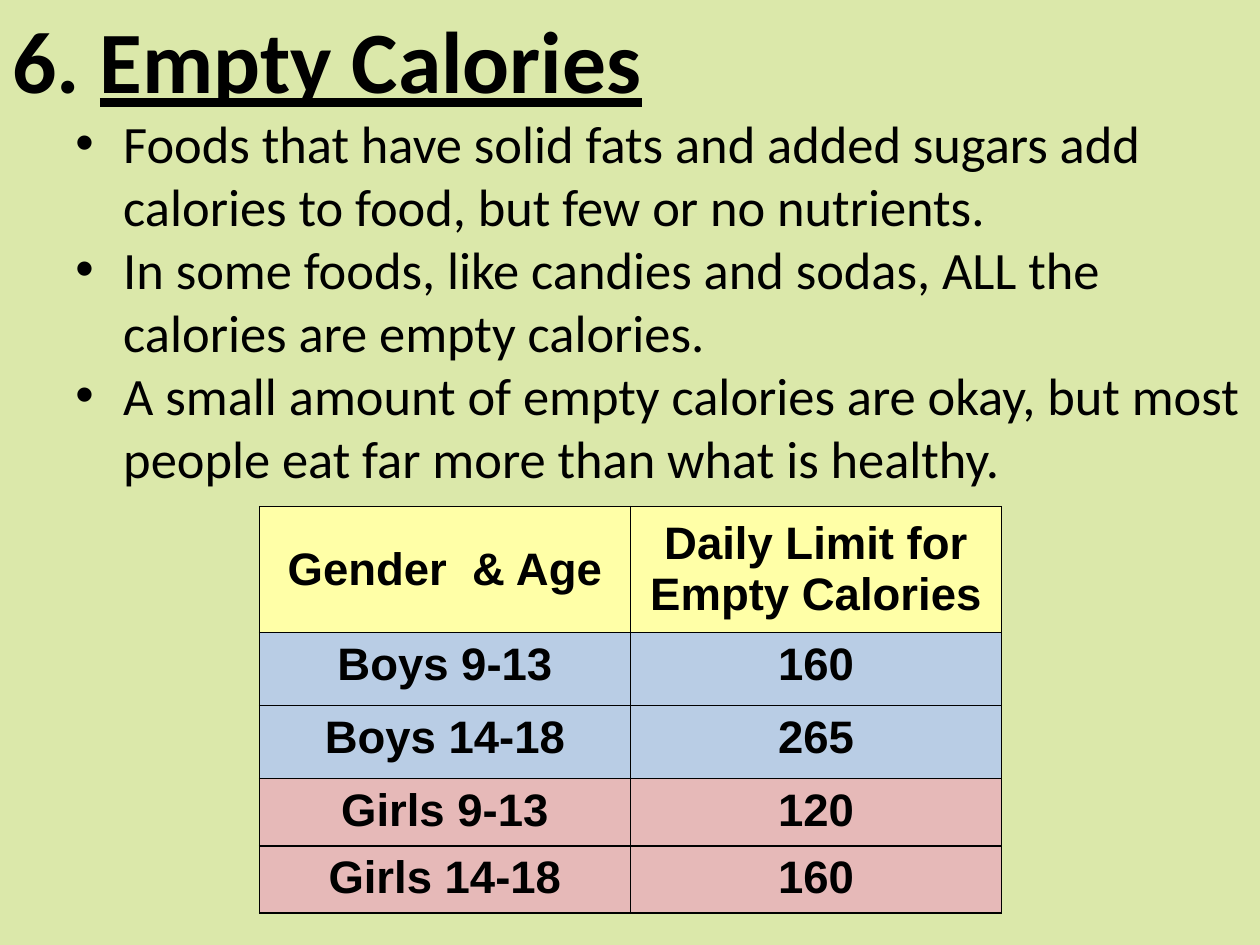
from typing import NamedTuple

from lxml.etree import SubElement
from pptx import Presentation
from pptx.dml.color import RGBColor
from pptx.enum.text import MSO_ANCHOR as Anchor, MSO_AUTO_SIZE as AutoSize, PP_ALIGN as Align
from pptx.oxml.ns import qn
from pptx.util import Inches, Pt

BLACK = "000000"
YELLOW = "FFFFA7"
BLUE = "B9CDE5"
PINK = "E6B9B8"
HANGING = 0.38


class LimitRow(NamedTuple):
    group: str
    limit: str
    height: float
    fill: str
    anchor: Anchor = Anchor.TOP


BULLETS = [
    "Foods that have solid fats and added sugars add calories to food, but few or no nutrients.",
    "In some foods, like candies and sodas, ALL the calories are empty calories.",
    "A small amount of empty calories are okay, but most people eat far more than what is healthy.",
]
LIMITS = [
    LimitRow("Gender  & Age", "Daily Limit for Empty Calories", 1, YELLOW, Anchor.MIDDLE),
    LimitRow("Boys 9-13", "160", 0.58, BLUE),
    LimitRow("Boys 14-18", "265", 0.58, BLUE),
    LimitRow("Girls 9-13", "120", 0.53, PINK),
    LimitRow("Girls 14-18", "160", 0.53, PINK),
]


def paint(target, color: str) -> None:
    if hasattr(target, "solid"):
        target.solid()
        target = target.fore_color
    target.rgb = RGBColor.from_string(color)


def write(para, text: str, *, size: float, font: str, bold=False, underline=False) -> None:
    span = para.add_run()
    span.text = text
    span.font.size = Pt(size)
    span.font.name = font
    span.font.bold = bold
    span.font.underline = underline
    paint(span.font.color, BLACK)


def hang(para, margin: float, bullet: str = "") -> None:
    properties = para._p.get_or_add_pPr()
    properties.set("marL", str(Inches(margin)))
    properties.set("indent", str(-Inches(HANGING)))
    if bullet:
        SubElement(properties, qn("a:buFont"), typeface="Arial")
        SubElement(properties, qn("a:buChar"), char=bullet)


def add_border(cell) -> None:
    properties = cell._tc.get_or_add_tcPr()
    for position, side in enumerate(("lnL", "lnR", "lnT", "lnB")):
        line = properties.makeelement(qn(f"a:{side}"), {"w": str(Pt(1))})
        fill = SubElement(line, qn("a:solidFill"))
        SubElement(fill, qn("a:srgbClr"), val=BLACK)
        properties.insert(position, line)


def add_text(page) -> None:
    box = page.shapes.add_textbox(0, 0, Inches(10), Inches(3.97))
    frame = box.text_frame
    frame.word_wrap = True
    frame.auto_size = AutoSize.SHAPE_TO_FIT_TEXT
    title = frame.paragraphs[0]
    hang(title, HANGING)
    write(title, "6. ", size=50, font="Calibri", bold=True)
    write(title, "Empty Calories", size=50, font="Calibri", bold=True, underline=True)
    for text in BULLETS:
        para = frame.add_paragraph()
        para.level = 1
        hang(para, 0.5 + HANGING, "•")
        write(para, text, size=30, font="Calibri")


def add_limits(page) -> None:
    height = sum(row.height for row in LIMITS)
    table = page.shapes.add_table(
        len(LIMITS), 2, Inches(2.06), Inches(4.02), Inches(5.89), Inches(height)
    ).table
    table.horz_banding = False
    for index, row in enumerate(LIMITS):
        table.rows[index].height = Inches(row.height)
        for column, text in enumerate((row.group, row.limit)):
            cell = table.cell(index, column)
            paint(cell.fill, row.fill)
            cell.vertical_anchor = row.anchor
            add_border(cell)
            para = cell.text_frame.paragraphs[0]
            para.alignment = Align.CENTER
            write(para, text, size=26, font="Arial", bold=True)


def main() -> None:
    deck = Presentation()
    deck.slide_width = Inches(10)
    deck.slide_height = Inches(7.5)
    page = deck.slides.add_slide(deck.slide_layouts[6])
    paint(page.background.fill, "DBE8AA")
    add_text(page)
    add_limits(page)
    deck.save("out.pptx")


if __name__ == "__main__":
    main()
